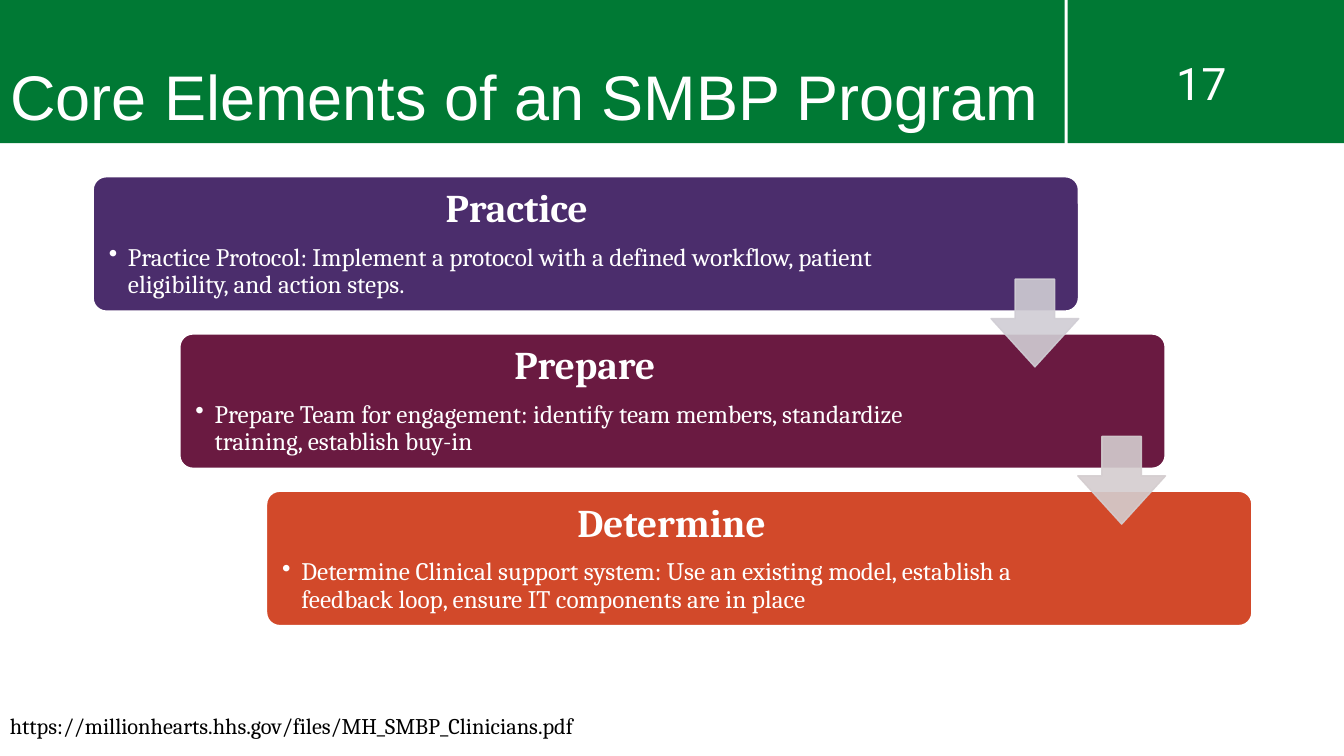
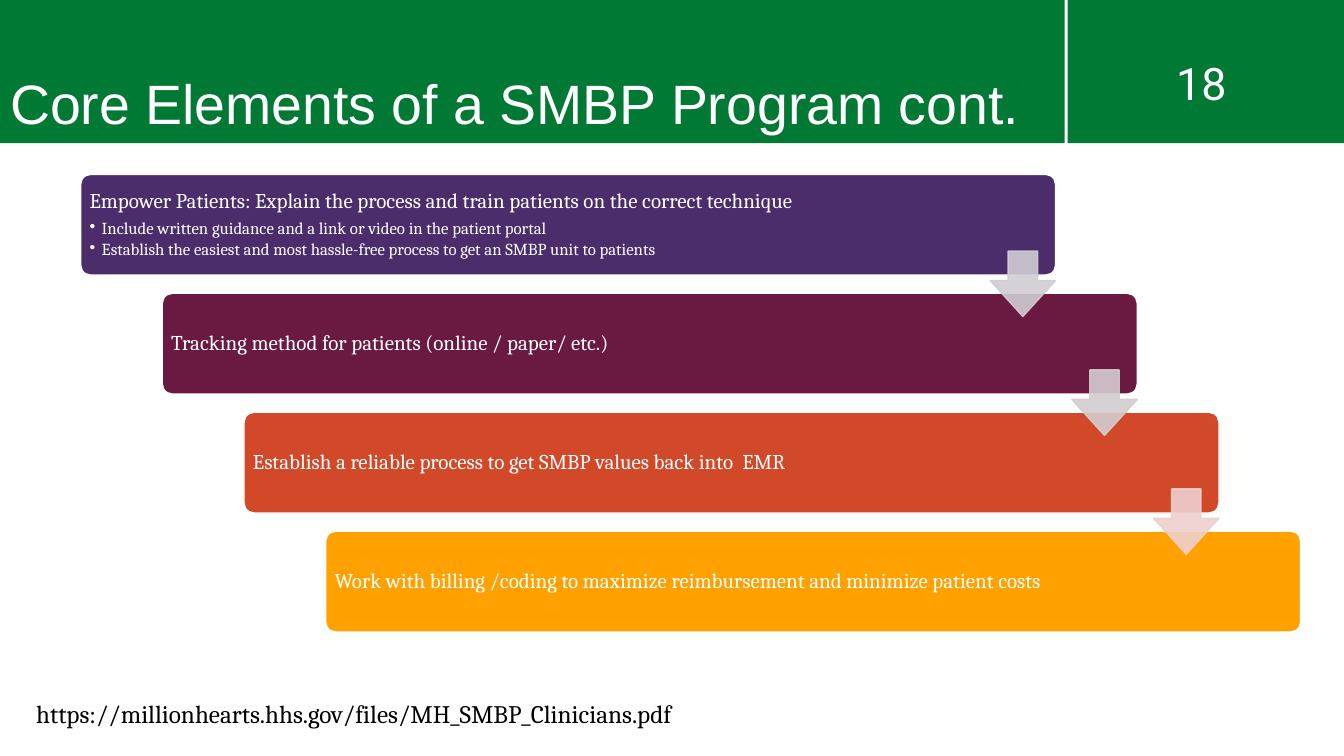
from lxml import etree
from pptx import Presentation
from pptx.dml.color import RGBColor
from pptx.enum.shapes import MSO_SHAPE
from pptx.enum.text import MSO_ANCHOR, MSO_AUTO_SIZE, PP_ALIGN
from pptx.oxml.ns import qn
from pptx.util import Inches, Pt

RECT, CARD, ARROW = MSO_SHAPE.RECTANGLE, MSO_SHAPE.ROUNDED_RECTANGLE, MSO_SHAPE.DOWN_ARROW
LEFT, CENTER = PP_ALIGN.LEFT, PP_ALIGN.CENTER
TOP, MIDDLE, BOTTOM = MSO_ANCHOR.TOP, MSO_ANCHOR.MIDDLE, MSO_ANCHOR.BOTTOM
NO_FIT = MSO_AUTO_SIZE.NONE

COLORS = {"green": "007934", "white": "FFFFFF", "black": "000000"}
CARD_COLORS = ["4B2D6C", "6A1A41", "D2492A", "FFA100"]
ARROW_COLORS = ["D0CDD4", "D4CDCF", "EED0CD"]
SOURCE = "https://millionhearts.hhs.gov/files/MH_SMBP_Clinicians.pdf"

# Each card is a heading followed by its bullets
SLIDES = [
    dict(title="Core Elements of an SMBP Program", title_size=45, title_anchor=BOTTOM,
         title_box=(0, 0, 10.56, 1.38), number="17",
         start=(0.92, 1.75), step=(0.86, 1.56), card=(9.78, 1.34), line=1.5,
         pad=0.12, right_pads=(1.49, 1.86), arrow=0.87, arrow_drop=1.02,
         heading=dict(size=28, bold=True, align=CENTER, after=9.8),
         bullet=dict(size=18, indent=0.19, after=2.7),
         source_box=(0, 7.02, 9.03, 0.37), source_size=16,
         cards=[
             ["Practice", "Practice Protocol: Implement a protocol with a defined workflow, "
              "patient eligibility, and action steps."],
             ["Prepare", "Prepare Team for engagement: identify team members, standardize "
              "training, establish buy-in"],
             ["Determine", "Determine Clinical support system: Use an existing model, "
              "establish a feedback loop, ensure IT components are in place"]]),
    dict(title="Core Elements of a SMBP Program cont.", title_size=39.6, title_anchor=MIDDLE,
         title_box=(0, 0.38, 10.62, 1.35), number="18",
         start=(0.8, 1.73), step=(0.81, 1.18), card=(9.67, 1), line=1,
         pad=0.06, right_pads=(1.16, 1.5), arrow=0.65, arrow_drop=0.76,
         heading=dict(size=15, after=5.25),
         bullet=dict(size=12, indent=0.12, after=1.8),
         source_box=(0.26, 6.88, 7.11, 0.4), source_size=18,
         cards=[
             ["Empower Patients: Explain the process and train patients on the correct technique",
              "Include written guidance and a link or video in the patient portal",
              "Establish the easiest and most hassle-free process to get an SMBP unit to patients"],
             ["Tracking method for patients (online / paper/ etc.)"],
             ["Establish a reliable process to get SMBP values back into  EMR"],
             ["Work with billing /coding to maximize reimbursement and minimize patient costs"]]),
]


def write(tf, text, size, font="Cambria", color="white", bold=False, align=LEFT,
          spacing=0.9, after=0, indent=0):
    """Fill the empty first paragraph, or add another one."""
    p = tf.paragraphs[0] if not tf.paragraphs[0].runs else tf.add_paragraph()
    if indent:
        p.level = 1
        pPr = p._p.get_or_add_pPr()
        pPr.set("marL", str(Inches(indent)))
        pPr.set("indent", str(-Inches(indent)))
        etree.SubElement(pPr, qn("a:buChar")).set("char", "•")
    p.alignment, p.line_spacing = align, spacing
    p.space_before, p.space_after = Pt(0), Pt(after)
    r = p.add_run()
    r.text = text
    r.font.name, r.font.size, r.font.bold = font, Pt(size), bold
    r.font.color.rgb = RGBColor.from_string(COLORS[color])


def add_block(slide, kind, x, y, w, h, fill, line=None, line_width=1):
    sp = slide.shapes.add_shape(kind, Inches(x), Inches(y), Inches(w), Inches(h))
    sp.shadow.inherit = False
    sp.fill.solid()
    sp.fill.fore_color.rgb = RGBColor.from_string(fill)
    if line:
        sp.line.color.rgb = RGBColor.from_string(line)
        sp.line.width = Pt(line_width)
    else:
        sp.line.fill.background()
    return sp


prs = Presentation()
prs.slide_width, prs.slide_height = Inches(13.33), Inches(7.5)
layout = prs.slide_layouts[5]
slides = [prs.slides.add_slide(layout) for _ in SLIDES]

# Header bands, kept on the shared layout behind the titles
for x, w in [(0, 10.56), (10.59, 2.74)]:
    band = add_block(slides[0], RECT, x, 0, w, 1.42, COLORS["green"])
    layout.shapes.element.insert(2, band.element)

for s, d in zip(slides, SLIDES):
    # Title
    title = s.shapes.title
    title.left, title.top, title.width, title.height = map(Inches, d["title_box"])
    tf = title.text_frame
    tf.word_wrap, tf.auto_size = True, NO_FIT
    tf.vertical_anchor = d["title_anchor"]
    write(tf, d["title"], d["title_size"], font="Arial")

    # Slide number and source
    for box, text, style in [
            ((11.33, 0.5, 1.17, 0.64), d["number"], dict(size=32, font="Roboto", align=CENTER)),
            (d["source_box"], SOURCE, dict(size=d["source_size"], color="black"))]:
        tf = s.shapes.add_textbox(*map(Inches, box)).text_frame
        tf.word_wrap, tf.vertical_anchor = True, TOP
        write(tf, text, spacing=1.0, **style)

    # Staircase of cards
    (x0, y0), (dx, dy), (w, h) = d["start"], d["step"], d["card"]
    for i, (heading, *bullets) in enumerate(d["cards"]):
        sp = add_block(s, CARD, x0 + i * dx, y0 + i * dy, w, h, CARD_COLORS[i],
                       COLORS["white"], d["line"])
        sp.adjustments[0] = 0.1
        tf = sp.text_frame
        tf.word_wrap, tf.vertical_anchor = True, MIDDLE
        tf.margin_left = tf.margin_top = tf.margin_bottom = Inches(d["pad"])
        tf.margin_right = Inches(d["right_pads"][min(i, 1)])
        write(tf, heading, **d["heading"])
        for bullet in bullets:
            write(tf, bullet, **d["bullet"])

    # Translucent arrows, flush with the right edge of the upper card
    size = d["arrow"]
    for i in range(len(d["cards"]) - 1):
        sp = add_block(s, ARROW, x0 + i * dx + w - size, y0 + i * dy + d["arrow_drop"],
                       size, size, ARROW_COLORS[i], ARROW_COLORS[i])
        sp.adjustments[0], sp.adjustments[1] = 0.45, 0.55
        for clr in sp.element.spPr.iter(qn("a:srgbClr")):
            etree.SubElement(clr, qn("a:alpha")).set("val", "90000")

prs.save("out.pptx")
